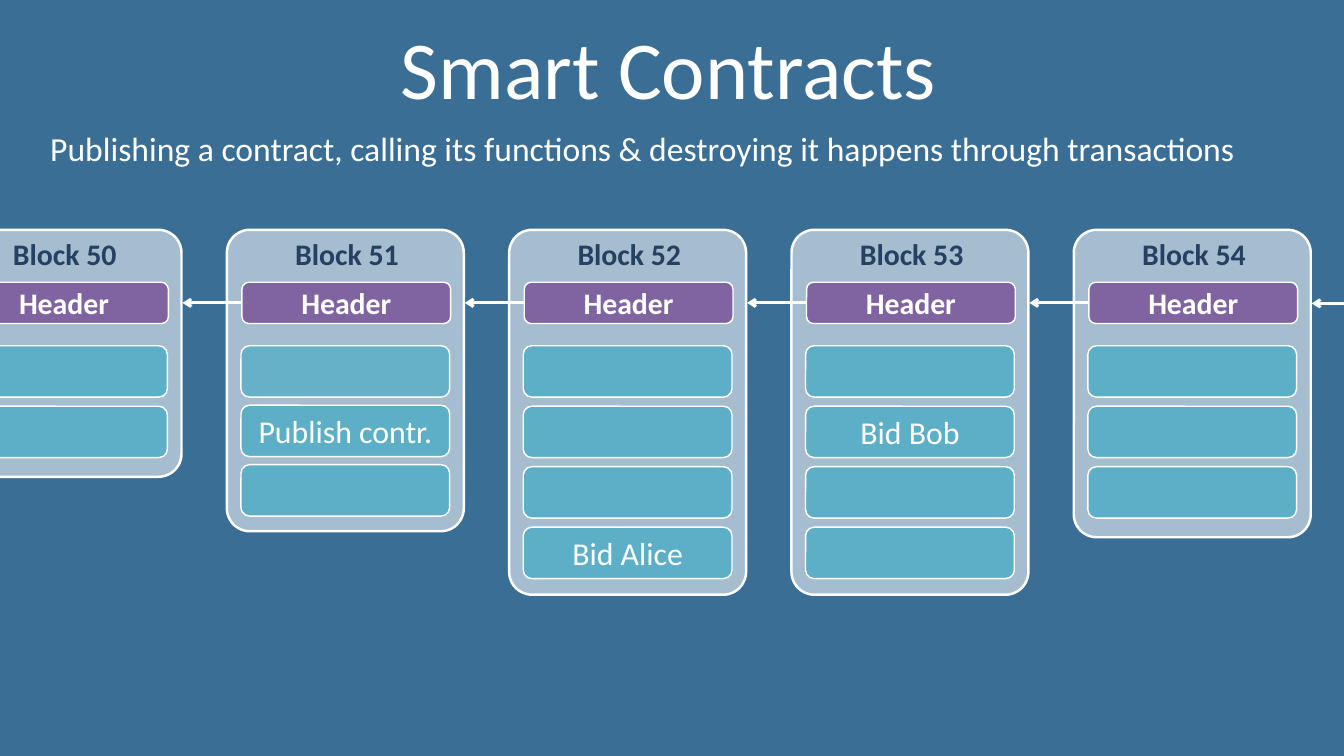
from lxml.etree import SubElement as SubEl
from pptx import Presentation
from pptx.dml.color import RGBColor
from pptx.enum.shapes import MSO_CONNECTOR as Conn, MSO_SHAPE as Shape
from pptx.enum.text import MSO_ANCHOR as Anchor, PP_ALIGN as Align
from pptx.oxml.ns import qn
from pptx.util import Inches, Pt

WHITE = RGBColor(0xFF, 0xFF, 0xFF)
BLUE = RGBColor(0x3B, 0x6E, 0x95)
NAVY = RGBColor(0x25, 0x40, 0x61)
TEAL = RGBColor(0x4B, 0xAC, 0xC6)
PURPLE = RGBColor(0x80, 0x64, 0xA2)

LEFT, PITCH, WIDTH, TOP = -0.55, 2.8, 2.35, 2.28
INSET, INNER = 0.15, 2.07
ARROW_Y, ARROW_END = 3.01, 13.6

BLOCKS = [
    ("Block 50", 2.45, 0.6, 80, ["", ""]),
    ("Block 51", 2.99, 0.59, 70, ["", "Publish contr.", ""]),
    ("Block 52", 3.62, 0.6, 80, ["", "", "", "Bid Alice"]),
    ("Block 53", 3.62, 0.6, 80, ["", "Bid Bob", "", ""]),
    ("Block 54", 3.05, 0.6, 80, ["", "", ""]),
]


def write(frame, text, size, color, bold=False, align=Align.LEFT):
    """Put one styled paragraph into a text frame."""
    para = frame.paragraphs[0]
    para.text = text
    para.alignment = align
    para.font.name = "Calibri"
    para.font.size = Pt(size)
    para.font.bold = bold
    para.font.color.rgb = color


def add_text(slide, box, text, size, color, wrap=True, **style):
    """Add a text box and return its frame."""
    frame = slide.shapes.add_textbox(*map(Inches, box)).text_frame
    frame.word_wrap = wrap
    write(frame, text, size, color, **style)
    return frame


def add_box(slide, box, fill, alpha=100, line=1):
    """Add a rounded box with a white outline."""
    shape = slide.shapes.add_shape(Shape.ROUNDED_RECTANGLE, *map(Inches, box))
    shape.shadow.inherit = False
    shape.fill.solid()
    shape.fill.fore_color.rgb = fill
    shape.line.color.rgb = WHITE
    shape.line.width = Pt(line)
    if alpha < 100:
        color = shape.element.xpath("./p:spPr/a:solidFill/a:srgbClr")[0]
        SubEl(color, qn("a:alpha")).set("val", str(alpha * 1000))
    return shape


def add_label(shape, text, size, bold=False):
    """Centre white text in a box."""
    frame = shape.text_frame
    frame.vertical_anchor = Anchor.MIDDLE
    frame.margin_left = frame.margin_right = Inches(0.05)
    write(frame, text, size, WHITE, bold, Align.CENTER)


def add_arrow(slide, start, end, header=None):
    """Draw an arrow to the left, joined to a header if given."""
    line = slide.shapes.add_connector(
        Conn.STRAIGHT, Inches(start), Inches(ARROW_Y), Inches(end), Inches(ARROW_Y))
    if header is not None:
        line.begin_connect(header, 1)
        line.end_y = line.begin_y
    line.line.color.rgb = WHITE
    line.line.width = Pt(2)
    SubEl(line.line._get_or_add_ln(), qn("a:tailEnd")).set("type", "arrow")
    SubEl(line.element.spPr, qn("a:effectLst"))


def add_block(slide, left, name, height, step, first, slots):
    """Add a block with its transactions and return the header."""
    panel = add_box(slide, (left, TOP, WIDTH, height), WHITE, 55, 1.75)
    panel.adjustments[0] = 0.097
    add_text(slide, (left + 0.58, 2.29, 1.24, 0.46), name, 21.3, NAVY,
             wrap=False, bold=True)
    header = add_box(slide, (left + INSET, 2.8, INNER, 0.41), PURPLE)
    add_label(header, "Header", 21.3, True)
    for row, text in enumerate(slots):
        box = (left + INSET - 0.01, 3.43 + row * step, INNER, 0.51)
        slot = add_box(slide, box, TEAL, 80 if row else first)
        if text:
            add_label(slot, text, 22.7)
    return header


def main():
    """Build and save the slide."""
    deck = Presentation()
    deck.slide_width, deck.slide_height = Inches(13.33), Inches(7.5)
    slide = deck.slides.add_slide(deck.slide_layouts[6])
    slide.background.fill.solid()
    slide.background.fill.fore_color.rgb = BLUE

    title = add_text(slide, (0.63, 0.04, 12, 1.25), "Smart Contracts", 58.7,
                     WHITE, align=Align.CENTER)
    title.vertical_anchor = Anchor.MIDDLE
    add_text(slide, (0.4, 1.22, 12.06, 0.5),
             "Publishing a contract, calling its functions & destroying it "
             "happens through transactions", 24, WHITE)

    for i, block in enumerate(BLOCKS):
        left = LEFT + i * PITCH
        header = add_block(slide, left, *block)
        if i:
            add_arrow(slide, left + INSET, left - PITCH + WIDTH + 0.01, header)
    add_arrow(slide, ARROW_END, left + WIDTH + 0.01)

    deck.save("out.pptx")


if __name__ == "__main__":
    main()
